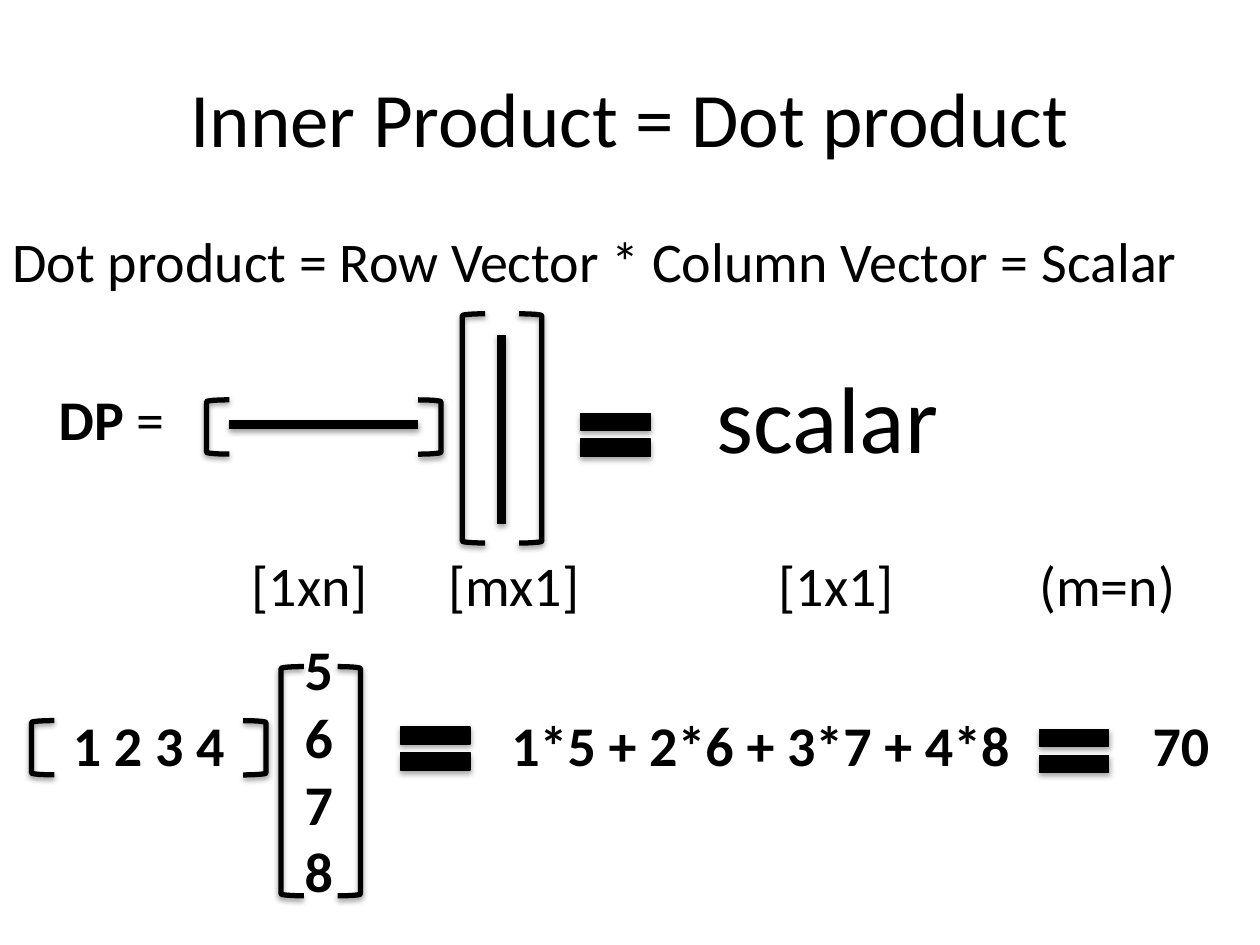
from lxml import etree
from pptx import Presentation
from pptx.dml.color import RGBColor
from pptx.enum.shapes import MSO_CONNECTOR, MSO_SHAPE
from pptx.enum.text import MSO_ANCHOR, PP_ALIGN
from pptx.oxml.ns import qn
from pptx.util import Pt

BRACKET = MSO_SHAPE.LEFT_BRACKET
EQUAL = MSO_SHAPE.MATH_EQUAL
STRAIGHT = MSO_CONNECTOR.STRAIGHT
MIDDLE = MSO_ANCHOR.MIDDLE
CENTER = PP_ALIGN.CENTER


def color(hex_text):
    return RGBColor.from_string(hex_text)


class SlideBuilder:
    font_name = "Calibri"
    ink = "000000"
    text_size = 32
    bracket_width = 13

    def __init__(self, slide):
        self.slide = slide

    def style_font(self, paragraph, size, bold=False):
        font = paragraph.font
        font.name, font.size, font.bold = self.font_name, Pt(size), bold
        font.color.rgb = color(self.ink)

    def add_shadow(self, shape, distance, opacity):
        effects = etree.SubElement(shape._element.spPr, qn("a:effectLst"))
        shadow = etree.SubElement(
            effects, qn("a:outerShdw"), blurRad=str(Pt(3.15)),
            dist=str(Pt(distance)), dir="5400000", rotWithShape="0")
        shade = etree.SubElement(shadow, qn("a:srgbClr"), val=self.ink)
        etree.SubElement(shade, qn("a:alpha"), val=str(opacity * 1000))

    def title(self, text, left, top, width, height):
        shape = self.slide.shapes.title
        shape.left, shape.top = Pt(left), Pt(top)
        shape.width, shape.height = Pt(width), Pt(height)
        frame = shape.text_frame
        frame.text = text
        frame.vertical_anchor = MIDDLE
        frame.paragraphs[0].alignment = CENTER
        self.style_font(frame.paragraphs[0], 44)

    def text(self, text, left, top, width, height=46, size=text_size,
             bold=False, wrap=False):
        shape = self.slide.shapes.add_textbox(
            Pt(left), Pt(top), Pt(width), Pt(height))
        shape.text_frame.word_wrap = wrap
        paragraph = shape.text_frame.paragraphs[0]
        paragraph.text = text
        self.style_font(paragraph, size, bold)
        return paragraph

    def line(self, x1, y1, x2, y2):
        connector = self.slide.shapes.add_connector(
            STRAIGHT, Pt(x1), Pt(y1), Pt(x2), Pt(y2))
        connector.line.color.rgb = color(self.ink)
        connector.line.width = Pt(5)
        self.add_shadow(connector, 1.6, 38)

    def brackets(self, left, top, spacing, height):
        for x, rotation in ((left, 0), (left + spacing, 180)):
            shape = self.slide.shapes.add_shape(
                BRACKET, Pt(x), Pt(top), Pt(self.bracket_width), Pt(height))
            shape.rotation = rotation
            shape.fill.background()
            shape.line.color.rgb = color(self.ink)
            shape.line.width = Pt(3)
            self.add_shadow(shape, 1.6, 38)

    def row_brackets(self, left, top):
        self.brackets(left, top, spacing=121, height=31)

    def column_brackets(self, left, top):
        self.brackets(left, top, spacing=32.4, height=131)

    def equal_sign(self, left, top):
        shape = self.slide.shapes.add_shape(
            EQUAL, Pt(left), Pt(top), Pt(54), Pt(41.8))
        shape.fill.solid()
        shape.fill.fore_color.rgb = color(self.ink)
        shape.line.color.rgb = color(self.ink)
        shape.line.width = Pt(0.75)
        self.add_shadow(shape, 1.8, 35)


def main():
    presentation = Presentation()
    presentation.slide_width, presentation.slide_height = Pt(720), Pt(540)
    slide = presentation.slides.add_slide(presentation.slide_layouts[5])
    builder = SlideBuilder(slide)

    # Title and definition
    builder.title("Inner Product = Dot product", 36, 21.6, 648, 90)
    builder.text("Dot product = Row Vector * Column Vector = Scalar",
                 0, 126, 720, wrap=True)

    # Row vector times column vector
    label = builder.text("DP ", 26.5, 216, 80)
    label.runs[0].font.bold = True
    label.add_run().text = "="
    builder.row_brackets(118, 228.5)
    builder.line(131, 242.6, 239, 242.6)
    builder.column_brackets(264.2, 179.3)
    builder.line(286.6, 191.5, 286.6, 299.5)
    builder.equal_sign(324.7, 227.5)
    builder.text("scalar", 402.5, 201.6, 142.6, height=72.7, size=54)

    # Dimensions
    for text, left, width in (("[1xn]", 136.8, 87), ("[mx1]", 249.1, 91.4),
                              ("[1x1]", 437.8, 90.7), ("(m=n)", 586.8, 124)):
        builder.text(text, left, 311, width, wrap=True)

    # Numeric example
    for text, left, width in (("1 2 3 4", 34.6, 102.2),
                              ("1*5 + 2*6 + 3*7 + 4*8", 285.1, 301.7),
                              ("70", 651.6, 47.5)):
        builder.text(text, left, 402.5, width, bold=True)
    builder.row_brackets(18, 411.8)
    builder.text("5 6 7 8", 167, 359.3, 33.1, height=162.7, bold=True, wrap=True)
    builder.column_brackets(160.6, 380.9)
    builder.equal_sign(221.8, 406.8)
    builder.equal_sign(586.8, 408.2)

    presentation.save("out.pptx")


if __name__ == "__main__":
    main()
